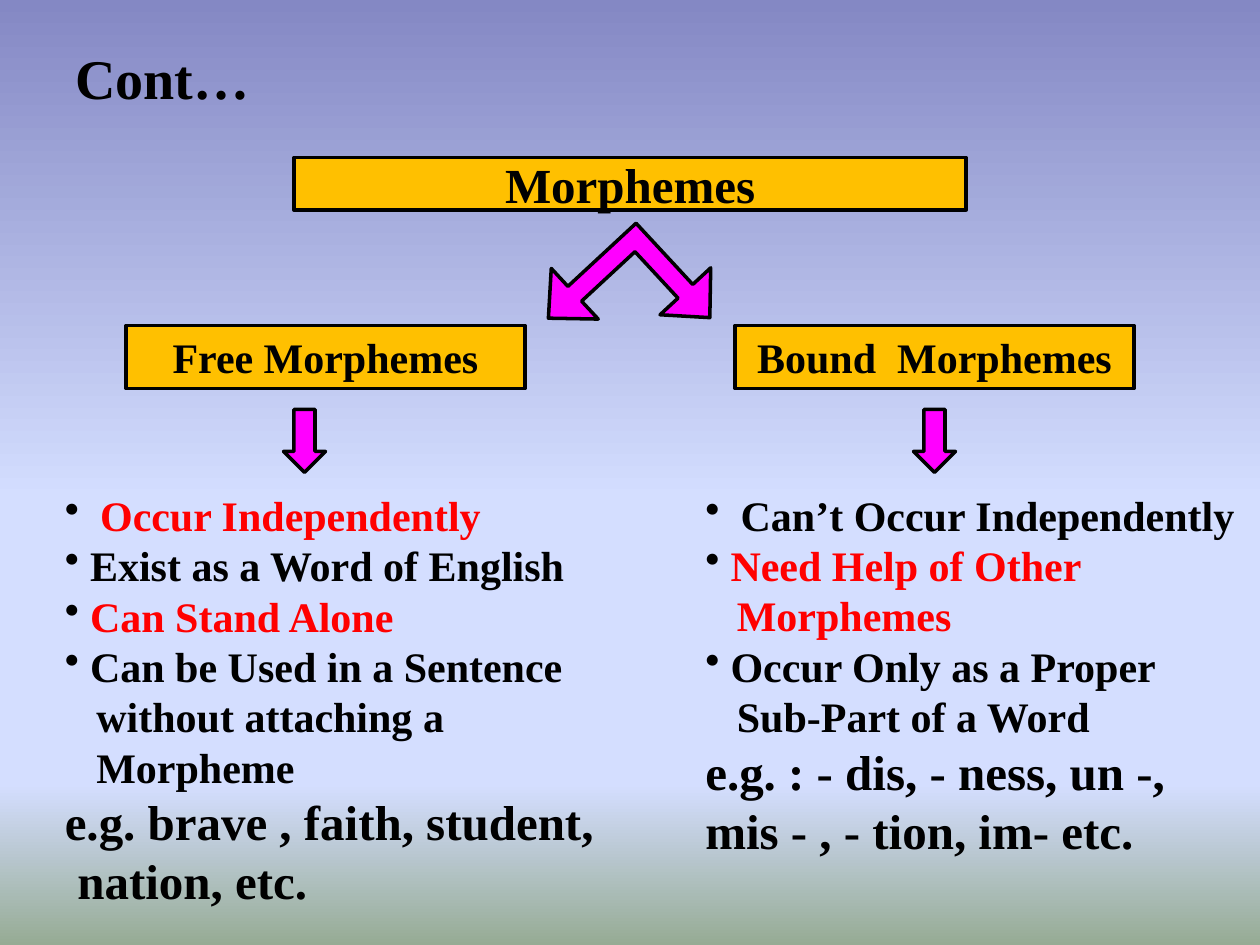
from lxml.etree import SubElement
from pptx import Presentation
from pptx.dml.color import RGBColor as RGB
from pptx.enum.shapes import MSO_SHAPE as Shape
from pptx.enum.text import MSO_ANCHOR as Anchor, PP_ALIGN as Align
from pptx.oxml.ns import qn
from pptx.util import Inches, Pt

BLACK = RGB(0x00, 0x00, 0x00)
RED = RGB(0xFF, 0x00, 0x00)
AMBER = RGB(0xFF, 0xC0, 0x00)
PINK = RGB(0xFF, 0x00, 0xFF)
DUSK = RGB(0x84, 0x88, 0xC4)
SKY = RGB(0xD4, 0xDE, 0xFF)
MOSS = RGB(0x96, 0xAB, 0x94)

COLS, ROWS = 120, 90
FIRST, ITEM, NEXT = 0.28, 0.2, 0.25  # text indents in inches

# Each line: text, colour, size, indent, bullet
FREE = [
    ("Occur Independently", RED, 24, FIRST, True),
    ("Exist as a Word of English", BLACK, 24, ITEM, True),
    ("Can Stand Alone", RED, 24, ITEM, True),
    ("Can be Used in a Sentence", BLACK, 24, ITEM, True),
    ("without attaching a", BLACK, 24, NEXT, False),
    ("Morpheme", BLACK, 24, NEXT, False),
    ("e.g. brave , faith, student,", BLACK, 28, 0, False),
    ("nation, etc.", BLACK, 28, 0.1, False),
]
BOUND = [
    ("Can’t Occur Independently", BLACK, 24, FIRST, True),
    ("Need Help of Other", RED, 24, ITEM, True),
    ("Morphemes", RED, 24, NEXT, False),
    ("Occur Only as a Proper", BLACK, 24, ITEM, True),
    ("Sub-Part of a Word", BLACK, 24, NEXT, False),
    ("e.g. : - dis, - ness, un -, mis - , - tion, im- etc.", BLACK, 28, 0, False),
]


class Deck:
    font = "Times New Roman"

    def __init__(self):
        self.prs = Presentation()
        self.prs.slide_width, self.prs.slide_height = Inches(10), Inches(7.5)
        self.slide = self.prs.slides.add_slide(self.prs.slide_layouts[6])

    def area(self, col, row, wide, high):
        """Turn grid columns and rows into slide lengths."""
        dx, dy = self.prs.slide_width / COLS, self.prs.slide_height / ROWS
        return [round(n) for n in (col * dx, row * dy, wide * dx, high * dy)]

    def back(self, stops):
        """Fill the background downwards through (percent, colour) stops."""
        fill = self.slide.background.fill
        fill.gradient()
        fill.gradient_angle = 270
        group = next(self.slide.element.iter(qn("a:gsLst")))
        for old in list(group):
            group.remove(old)
        for spot, tint in stops:
            stop = SubElement(group, qn("a:gs"), pos=str(spot * 1000))
            SubElement(stop, qn("a:srgbClr"), val=str(tint))

    def words(self, para, text, size, tint=BLACK):
        run = para.add_run()
        run.text = text
        font = run.font
        font.name, font.size, font.bold = self.font, Pt(size), True
        font.color.rgb = tint

    def form(self, kind, spot, tint):
        shape = self.slide.shapes.add_shape(kind, *self.area(*spot))
        shape.shadow.inherit = False
        shape.fill.solid()
        shape.fill.fore_color.rgb = tint
        shape.line.color.rgb, shape.line.width = BLACK, Pt(2)
        return shape

    def box(self, text, size, *spot):
        frame = self.form(Shape.FLOWCHART_PROCESS, spot, AMBER).text_frame
        frame.vertical_anchor = Anchor.MIDDLE
        para = frame.paragraphs[0]
        para.alignment = Align.CENTER
        self.words(para, text, size)

    def down(self, *spot):
        self.form(Shape.DOWN_ARROW, spot, PINK)

    def fork(self, turn, bends, *spot):
        """Draw a mirrored two-headed arrow, turned to point down both ways."""
        shape = self.form(Shape.LEFT_UP_ARROW, spot, PINK)
        for i, bend in enumerate(bends):
            shape.adjustments[i] = bend
        shape.rotation = turn
        shape.element.spPr.find(qn("a:xfrm")).set("flipH", "1")

    def text(self, *spot):
        frame = self.slide.shapes.add_textbox(*self.area(*spot)).text_frame
        frame.word_wrap = True
        return frame

    def title(self, text, *spot):
        frame = self.text(*spot)
        frame.vertical_anchor = Anchor.MIDDLE
        self.words(frame.paragraphs[0], text, 32)

    def points(self, lines, *spot):
        frame = self.text(*spot)
        for i, (text, tint, size, gap, dot) in enumerate(lines):
            para = frame.add_paragraph() if i else frame.paragraphs[0]
            props = para._p.get_or_add_pPr()
            props.set("marL", str(Inches(gap)))
            if dot:
                props.set("indent", str(-Inches(gap)))
                mark = SubElement(props, qn("a:buClr"))
                SubElement(mark, qn("a:srgbClr"), val=str(BLACK))
                SubElement(props, qn("a:buChar"), char="•")
            self.words(para, text, size, tint)


def main():
    deck = Deck()
    deck.back([(0, DUSK), (53, SKY), (83, SKY), (100, MOSS)])
    deck.title("Cont…", 6, 3.6, 108, 7.4)
    deck.box("Morphemes", 28, 28, 15, 64, 5)
    deck.fork(137.2, (0.14, 0.24, 0.25), 52.7, 21.1, 14.6, 13.7)
    sides = [
        ("Free Morphemes", 12, 27, FREE, 5, 46.4),
        ("Bound  Morphemes", 70, 87, BOUND, 66, 36.7),
    ]
    for name, left, tip, lines, edge, high in sides:
        deck.box(name, 24, left, 31, 38, 6)
        deck.down(tip, 39, 4, 6)
        deck.points(lines, edge, 46, 54, high)
    deck.prs.save("out.pptx")


if __name__ == "__main__":
    main()
